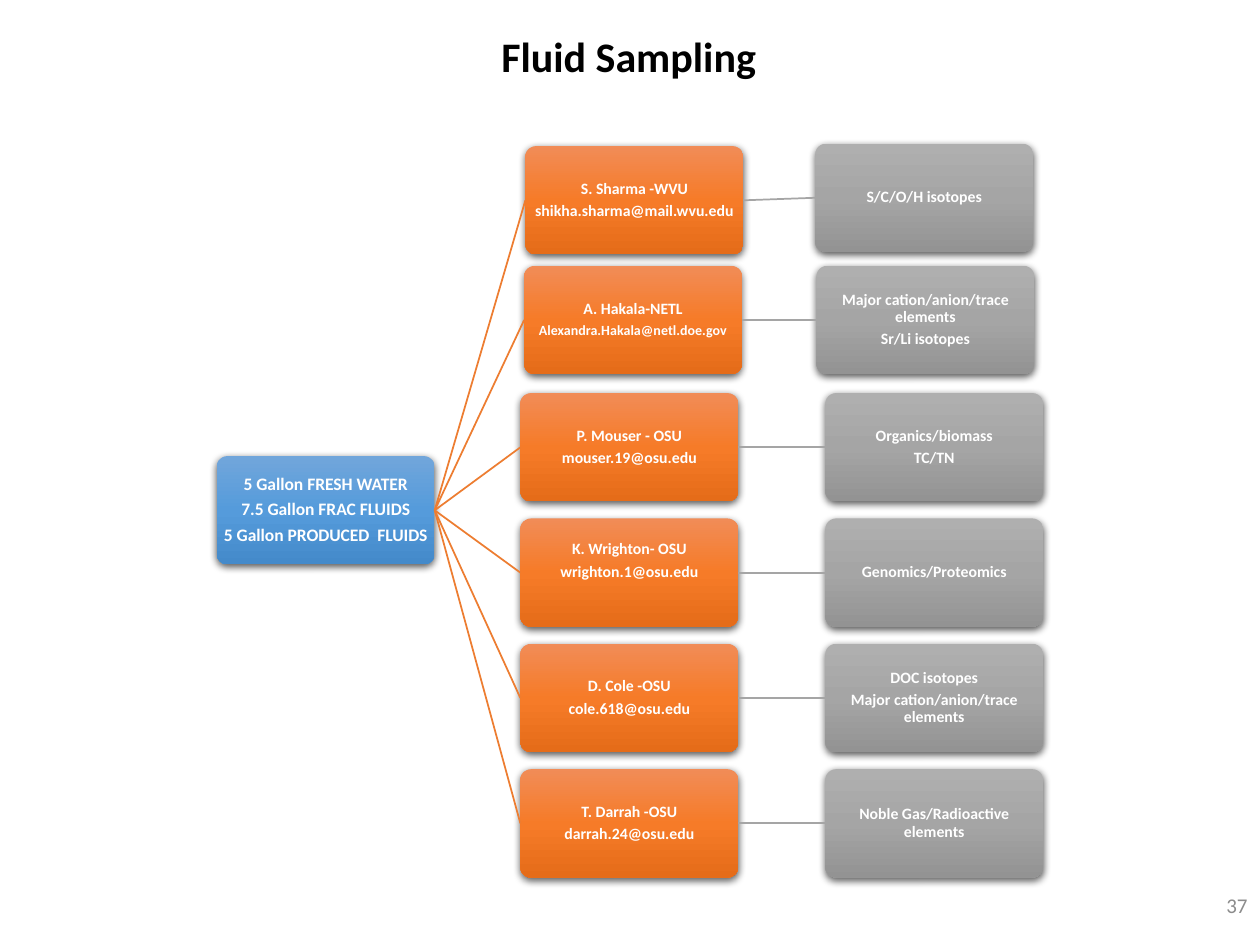
from copy import deepcopy
from dataclasses import dataclass

from lxml.etree import SubElement
from pptx import Presentation
from pptx.dml.color import RGBColor
from pptx.enum.shapes import MSO_CONNECTOR, MSO_SHAPE
from pptx.enum.text import MSO_ANCHOR, PP_ALIGN
from pptx.oxml.ns import qn
from pptx.util import Inches, Pt


@dataclass(frozen=True)
class Theme:
    font: str = "Calibri"
    white: str = "FFFFFF"
    black: str = "000000"
    page_gray: str = "8C8C8C"
    blue: tuple = ("71A6DB", "559BDB", "448ACA")
    orange: tuple = ("F18C57", "F67B28", "E56C19")
    gray: tuple = ("AFAFAF", "A5A5A5", "939393")
    orange_line: str = "ED7D31"
    gray_line: str = "A5A5A5"
    title: float = 24
    page: float = 12
    root: float = 10
    node: float = 9
    small: float = 8


@dataclass(frozen=True)
class Branch:
    person: tuple
    tests: tuple
    person_at: tuple
    tests_at: tuple
    email_size: float = 9
    lift: float = 0


THEME = Theme()
NODE_W, NODE_H = 1.73, 0.86
PERSON_X, TESTS_X = 4.13, 6.55
ROW_TOP, ROW_STEP = 3.12, 0.995


def row(i):
    y = ROW_TOP + i * ROW_STEP
    return (PERSON_X, y), (TESTS_X, y)


BRANCHES = [
    Branch(("S. Sharma -WVU", "shikha.sharma@mail.wvu.edu"),
           ("S/C/O/H isotopes",), (4.17, 1.16), (6.47, 1.14)),
    Branch(("A. Hakala-NETL", "Alexandra.Hakala@netl.doe.gov"),
           ("Major cation/anion/trace elements", "Sr/Li isotopes"),
           (4.16, 2.11), (6.48, 2.11), email_size=THEME.small),
    Branch(("P. Mouser - OSU", "mouser.19@osu.edu"),
           ("Organics/biomass", "TC/TN"), *row(0)),
    Branch(("K. Wrighton- OSU", "wrighton.1@osu.edu"),
           ("Genomics/Proteomics",), *row(1), lift=0.18),
    Branch(("D. Cole -OSU", "cole.618@osu.edu"),
           ("DOC isotopes", "Major cation/anion/trace elements"), *row(2)),
    Branch(("T. Darrah -OSU", "darrah.24@osu.edu"),
           ("Noble Gas/Radioactive elements",), *row(3)),
]


def write(tf, lines, *, size, color, bold=True, align=PP_ALIGN.CENTER,
          spacing=0.9, after=0.0, last_size=None):
    tf.word_wrap = True
    tf.vertical_anchor = MSO_ANCHOR.MIDDLE
    for i, text in enumerate(lines):
        p = tf.add_paragraph() if i else tf.paragraphs[0]
        p.alignment = align
        p.line_spacing = spacing
        p.space_after = Pt(after if i < len(lines) - 1 else 0)
        r = p.add_run()
        r.text = text
        r.font.name = THEME.font
        r.font.size = Pt(last_size if last_size and i == len(lines) - 1 else size)
        r.font.bold = bold
        r.font.color.rgb = RGBColor.from_string(color)


def add_label(slide, x: float, y: float, w: float, h: float, text: str, **fmt):
    s = slide.shapes.add_textbox(Inches(x), Inches(y), Inches(w), Inches(h))
    write(s.text_frame, (text,), **fmt)


def fill_gradient(s, colors: tuple):
    s.fill.gradient()
    s.fill.gradient_angle = 270
    stops = s._element.spPr.find(".//" + qn("a:gsLst"))
    stops.insert(1, deepcopy(stops[0]))
    for stop, position, color in zip(s.fill.gradient_stops, (0, 0.5, 1), colors):
        stop.position = position
        stop.color.rgb = RGBColor.from_string(color)


def add_shadow(s):
    s.shadow.inherit = False
    effects = s._element.spPr.find(qn("a:effectLst"))
    shadow = SubElement(effects, qn("a:outerShdw"), blurRad=str(Pt(4.5)),
                        dist=str(Pt(1.5)), dir="5400000", algn="ctr", rotWithShape="0")
    color = SubElement(shadow, qn("a:srgbClr"), val=THEME.black)
    SubElement(color, qn("a:alpha"), val="63000")


def add_node(slide, at: tuple, lines: tuple, colors: tuple, size: float = THEME.node,
             last_size: float = None, lift: float = 0):
    x, y = at
    s = slide.shapes.add_shape(MSO_SHAPE.ROUNDED_RECTANGLE, Inches(x), Inches(y),
                               Inches(NODE_W), Inches(NODE_H))
    s.adjustments[0] = 0.1
    fill_gradient(s, colors)
    s.line.fill.background()
    add_shadow(s)
    tf = s.text_frame
    tf.margin_left = tf.margin_right = tf.margin_top = Inches(0.03)
    tf.margin_bottom = Inches(0.03 + lift)
    write(tf, lines, size=size, color=THEME.white, after=size * 0.36, last_size=last_size)
    return s


def join(slide, start, end, color: str):
    c = slide.shapes.add_connector(MSO_CONNECTOR.STRAIGHT, 0, 0, 0, 0)
    c.begin_connect(start, 3)
    c.end_connect(end, 1)
    c.line.color.rgb = RGBColor.from_string(color)
    c.line.width = Pt(1)
    SubElement(c._element.spPr, qn("a:effectLst"))


def main():
    prs = Presentation()
    prs.slide_width, prs.slide_height = Inches(10), Inches(7.5)
    slide = prs.slides.add_slide(prs.slide_layouts[6])

    root = add_node(slide, (1.72, 3.62),
                    ("5 Gallon FRESH WATER", "7.5 Gallon FRAC FLUIDS",
                     "5 Gallon PRODUCED  FLUIDS"), THEME.blue, THEME.root)
    for b in BRANCHES:
        person = add_node(slide, b.person_at, b.person, THEME.orange,
                          last_size=b.email_size, lift=b.lift)
        tests = add_node(slide, b.tests_at, b.tests, THEME.gray)
        join(slide, root, person, THEME.orange_line)
        join(slide, person, tests, THEME.gray_line)

    add_label(slide, 0.68, 0.08, 8.62, 0.77, "Fluid Sampling",
              size=THEME.title, color=THEME.black)
    add_label(slide, 7.75, 6.98, 2.25, 0.4, "37", size=THEME.page,
              color=THEME.page_gray, bold=False, align=PP_ALIGN.RIGHT, spacing=1.0)
    prs.save("out.pptx")


if __name__ == "__main__":
    main()
